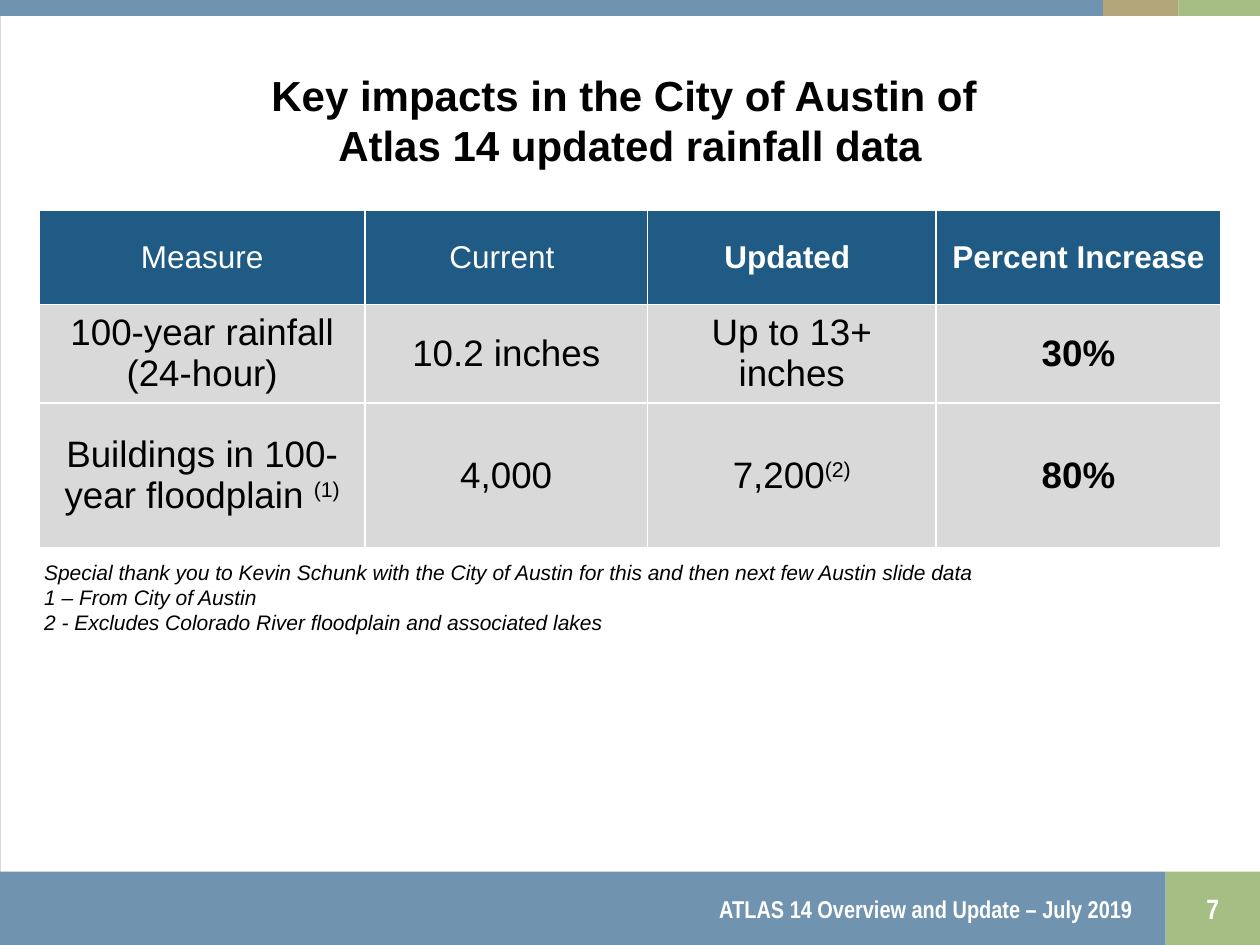
from lxml.etree import SubElement
from pptx import Presentation
from pptx.dml.color import RGBColor
from pptx.enum.shapes import MSO_SHAPE
from pptx.enum.text import MSO_ANCHOR as ANCHOR, MSO_AUTO_SIZE as AUTOSIZE, PP_ALIGN as ALIGN
from pptx.oxml.ns import qn
from pptx.util import Cm, Pt

WHITE = RGBColor(0xFF, 0xFF, 0xFF)
BLACK = RGBColor(0, 0, 0)
GREY = RGBColor(0xD9, 0xD9, 0xD9)
NAVY = RGBColor(0x1F, 0x5B, 0x84)
BLUE = RGBColor(0x70, 0x93, 0xB0)
TAN = RGBColor(0xB2, 0xA6, 0x7A)
GREEN = RGBColor(0xA5, 0xBE, 0x84)

# Content
TITLE = ["Key impacts in the City of Austin of ", "Atlas 14 updated rainfall data"]
HEADER = ["Measure", "Current ", "Updated ", "Percent Increase"]
# A cell is its text and an optional superscript mark
ROWS = [
    [("100-year rainfall (24-hour)", ""), ("10.2 inches", ""),
     ("Up to 13+ inches", ""), ("30%", "")],
    [("Buildings in 100-year floodplain ", "(1)"), ("4,000", ""),
     ("7,200", "(2)"), ("80%", "")],
]
NOTES = [
    "Special thank you to Kevin Schunk with the City of Austin for this and then next few Austin slide data",
    "1 – From City of Austin",
    "2 - Excludes Colorado River floodplain and associated lakes",
]
FOOTER = "ATLAS 14 Overview and Update – July 2019"
PAGE = "7"

# Layout in cm
SLIDE_W, SLIDE_H = 25.4, 19.05
BAR_H, FOOT_H = 0.32, 1.48
FOOT_TOP = SLIDE_H - FOOT_H
TOP_BARS = [(22.24, BLUE), (1.52, TAN), (1.64, GREEN)]
PAGE_X = 23.5
COLS = [6.57, 5.69, 5.82, 5.74]
ROW_H = [1.9, 1.98, 2.93]


def add_run(p, text, size, color=BLACK, font="Arial", bold=False, italic=False, raised=False):
    r = p.add_run()
    r.text = text
    f = r.font
    f.name, f.size, f.bold, f.italic = font, Pt(size), bold, italic
    f.color.rgb = color
    if raised:
        r._r.get_or_add_rPr().set("baseline", "30000")


def add_lines(tf, lines, align, size, **style):
    tf.word_wrap = True
    for i, line in enumerate(lines):
        p = tf.add_paragraph() if i else tf.paragraphs[0]
        p.alignment = align
        add_run(p, line, size, **style)


def add_rect(s, x, y, w, h, fill=None, line=None):
    sp = s.shapes.add_shape(MSO_SHAPE.RECTANGLE, Cm(x), Cm(y), Cm(w), Cm(h))
    sp.shadow.inherit = False
    if fill is None:
        sp.fill.background()
    else:
        sp.fill.solid()
        sp.fill.fore_color.rgb = fill
    if line is None:
        sp.line.fill.background()
    else:
        sp.line.color.rgb = line
        sp.line.width = Pt(0.25)
    return sp


def add_borders(cell, color, width):
    tc_pr = cell._tc.get_or_add_tcPr()
    for i, side in enumerate(("lnL", "lnR", "lnT", "lnB")):
        ln = SubElement(tc_pr, qn(f"a:{side}"), w=str(Pt(width)))
        fill = SubElement(ln, qn("a:solidFill"))
        SubElement(fill, qn("a:srgbClr"), val=str(color))
        tc_pr.insert(i, ln)  # borders come before the cell fill


def add_cell(cell, text, mark, size, color, bold, fill):
    cell.fill.solid()
    cell.fill.fore_color.rgb = fill
    add_borders(cell, WHITE, 1)
    cell.vertical_anchor = ANCHOR.MIDDLE
    cell.margin_left = cell.margin_right = Cm(0.18)
    cell.margin_top = cell.margin_bottom = Cm(0.1)
    p = cell.text_frame.paragraphs[0]
    p.alignment = ALIGN.CENTER
    add_run(p, text, size, color, bold=bold)
    if mark:
        add_run(p, mark, size, color, bold=bold, raised=True)


def main():
    prs = Presentation()
    prs.slide_width, prs.slide_height = Cm(SLIDE_W), Cm(SLIDE_H)
    s = prs.slides.add_slide(prs.slide_layouts[5])

    # Frame and top bars
    add_rect(s, 0, 0, SLIDE_W, SLIDE_H, line=GREY)
    x = 0
    for w, color in TOP_BARS:
        add_rect(s, x, 0, w, BAR_H, color)
        x += w

    # Footer band and page number
    add_rect(s, 0, FOOT_TOP, PAGE_X, FOOT_H, BLUE)
    tf = s.shapes.add_textbox(Cm(4.45), Cm(17.91), Cm(18.64), Cm(0.81)).text_frame
    tf.vertical_anchor = ANCHOR.MIDDLE
    add_lines(tf, [FOOTER], ALIGN.RIGHT, 13.9, color=WHITE, font="Arial Narrow", bold=True)
    tf = add_rect(s, PAGE_X, FOOT_TOP, SLIDE_W - PAGE_X, FOOT_H, GREEN).text_frame
    tf.vertical_anchor = ANCHOR.MIDDLE
    add_lines(tf, [PAGE], ALIGN.CENTER, 16, color=WHITE, font="Arial Narrow", bold=True)

    # Title
    title = s.shapes.title
    title.left, title.top, title.width, title.height = Cm(0), Cm(1.27), Cm(SLIDE_W), Cm(2.31)
    tf = title.text_frame
    tf.vertical_anchor = ANCHOR.TOP
    tf.auto_size = AUTOSIZE.SHAPE_TO_FIT_TEXT
    add_lines(tf, TITLE, ALIGN.CENTER, 24, bold=True)

    # Notes
    tf = s.shapes.add_textbox(Cm(0.64), Cm(11.15), Cm(22.99), Cm(1.8)).text_frame
    tf.auto_size = AUTOSIZE.SHAPE_TO_FIT_TEXT
    add_lines(tf, NOTES, ALIGN.LEFT, 12, italic=True)

    # Table
    table = s.shapes.add_table(len(ROW_H), len(COLS), Cm(0.79), Cm(4.24),
                               Cm(sum(COLS)), Cm(sum(ROW_H))).table
    for col, w in zip(table.columns, COLS):
        col.width = Cm(w)
    for row, h in zip(table.rows, ROW_H):
        row.height = Cm(h)
    for c, text in enumerate(HEADER):
        add_cell(table.cell(0, c), text, "", 18, WHITE, c >= 2, NAVY)
    for r, row in enumerate(ROWS, 1):
        for c, (text, mark) in enumerate(row):
            add_cell(table.cell(r, c), text, mark, 21, BLACK, c == 3, GREY)

    prs.save("out.pptx")


if __name__ == "__main__":
    main()
